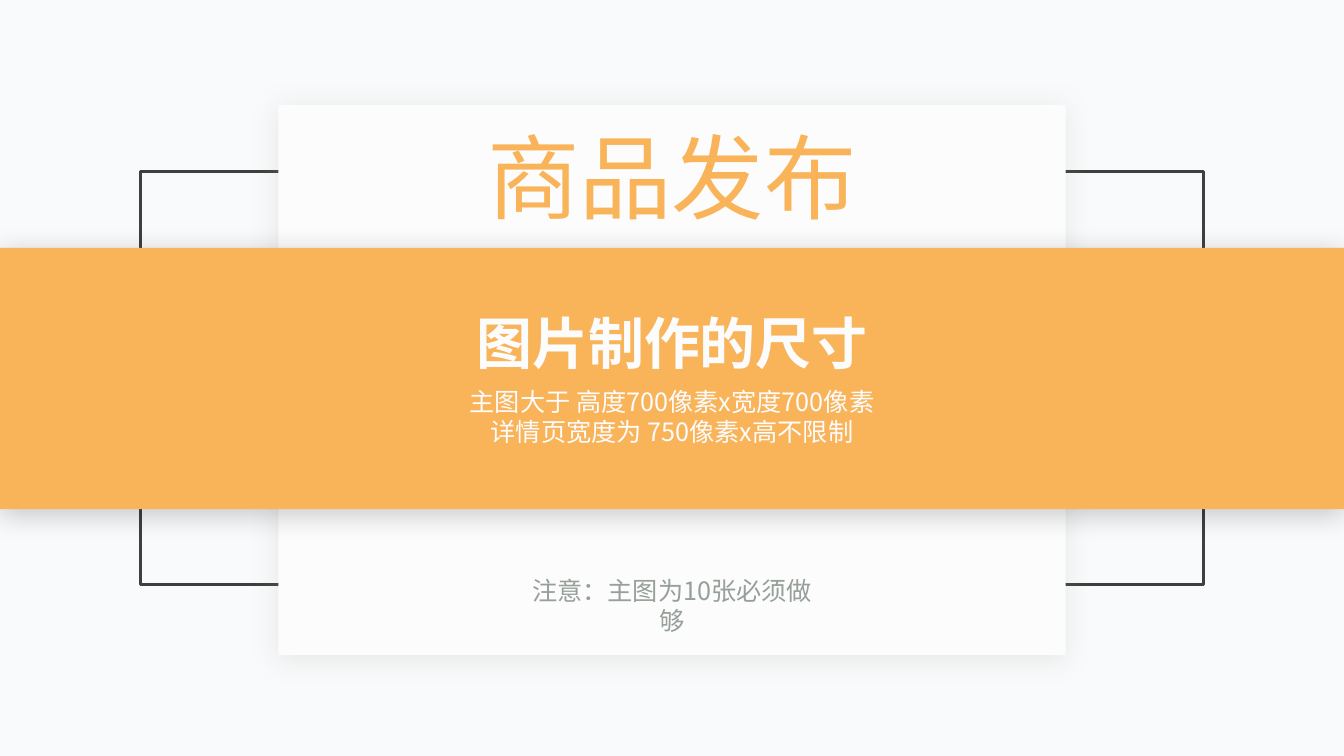
from dataclasses import dataclass

from lxml import etree
from pptx import Presentation
from pptx.dml.color import RGBColor
from pptx.enum.shapes import MSO_SHAPE
from pptx.enum.text import MSO_ANCHOR, MSO_AUTO_SIZE, PP_ALIGN
from pptx.oxml.ns import qn
from pptx.util import Pt

RECTANGLE = MSO_SHAPE.RECTANGLE
CENTER = PP_ALIGN.CENTER
TOP = MSO_ANCHOR.TOP
NO_AUTOFIT = MSO_AUTO_SIZE.NONE

PAGE_WIDTH, PAGE_HEIGHT = 960, 540
TITLE_ONLY = 5
FONT = "Noto Sans CJK SC"
COLORS = {
    "background": "F9FAFB",
    "frame": "3F403E",
    "card": "FCFCFD",
    "accent": "F9B359",
    "muted": "969F98",
    "black": "000000",
}


@dataclass
class Panel:
    """A rectangle centred across the page; lengths in points."""
    top: float
    width: float
    height: float
    fill: str = ""
    line: str = ""
    shadow: str = ""


@dataclass
class Label:
    """Text centred across the page; lengths in points."""
    text: str
    top: float
    width: float
    height: float
    size: float
    color: str
    bold: bool = False
    wrap: bool = False


PANELS = [
    Panel(122.4, 758.88, 295.2, line="frame"),
    Panel(74.88, 562.32, 393.12, fill="card", shadow="muted"),
    Panel(177.12, PAGE_WIDTH, 186.48, fill="accent", shadow="black"),
]
TITLE = Label("商品发布", 82.08, 278.64, 87.12, 66, "accent")
LABELS = [
    Label("图片制作的尺寸", 216.72, 294.48, 55.44, 40, "card", bold=True),
    Label("主图大于 高度700像素x宽度700像素\n详情页宽度为 750像素x高不限制",
          272.16, 455.04, 51.12, 18, "card", wrap=True),
    Label("注意：主图为10张必须做够", 407.52, 229.68, 51.12, 18, "muted", wrap=True),
]


def rgb(name: str) -> RGBColor:
    return RGBColor.from_string(COLORS[name])


def centered_left(width: float) -> float:
    return (PAGE_WIDTH - width) / 2


def add_shadow(shape, color: str) -> None:
    """Cast a soft shadow straight down at 20% opacity."""
    effects = shape._element.spPr.find(qn("a:effectLst"))
    shadow = etree.SubElement(
        effects, qn("a:outerShdw"), blurRad=str(Pt(20)), dist=str(Pt(3)),
        dir="5400000", algn="t", rotWithShape="0")
    tint = etree.SubElement(shadow, qn("a:srgbClr"), val=COLORS[color])
    etree.SubElement(tint, qn("a:alpha"), val="20000")


def draw_panel(page, panel: Panel) -> None:
    box = page.shapes.add_shape(
        RECTANGLE, Pt(centered_left(panel.width)), Pt(panel.top),
        Pt(panel.width), Pt(panel.height))
    box.shadow.inherit = False
    if panel.fill:
        box.fill.solid()
        box.fill.fore_color.rgb = rgb(panel.fill)
    else:
        box.fill.background()
    if panel.line:
        box.line.color.rgb = rgb(panel.line)
        box.line.width = Pt(2)
    else:
        box.line.fill.background()
    if panel.shadow:
        add_shadow(box, panel.shadow)


def write_label(box, label: Label) -> None:
    box.left, box.top = Pt(centered_left(label.width)), Pt(label.top)
    box.width, box.height = Pt(label.width), Pt(label.height)
    frame = box.text_frame
    frame.text = label.text
    frame.word_wrap = label.wrap
    frame.auto_size = NO_AUTOFIT
    frame.vertical_anchor = TOP
    for para in frame.paragraphs:
        para.alignment = CENTER
        for span in para.runs:
            font = span.font
            font.name = FONT
            font.size = Pt(label.size)
            font.bold = label.bold
            font.color.rgb = rgb(label.color)
            # East Asian typeface
            etree.SubElement(font._element, qn("a:ea"), typeface=FONT)


def main() -> None:
    deck = Presentation()
    deck.slide_width, deck.slide_height = Pt(PAGE_WIDTH), Pt(PAGE_HEIGHT)
    page = deck.slides.add_slide(deck.slide_layouts[TITLE_ONLY])
    page.background.fill.solid()
    page.background.fill.fore_color.rgb = rgb("background")

    # Frame, card and band
    for panel in PANELS:
        draw_panel(page, panel)

    # Title, brought in front of the panels
    title = page.shapes.title
    write_label(title, TITLE)
    page.shapes._spTree.append(title._element)

    # Heading, sizes and note
    for label in LABELS:
        write_label(page.shapes.add_textbox(0, 0, 0, 0), label)

    deck.save("out.pptx")


if __name__ == "__main__":
    main()
